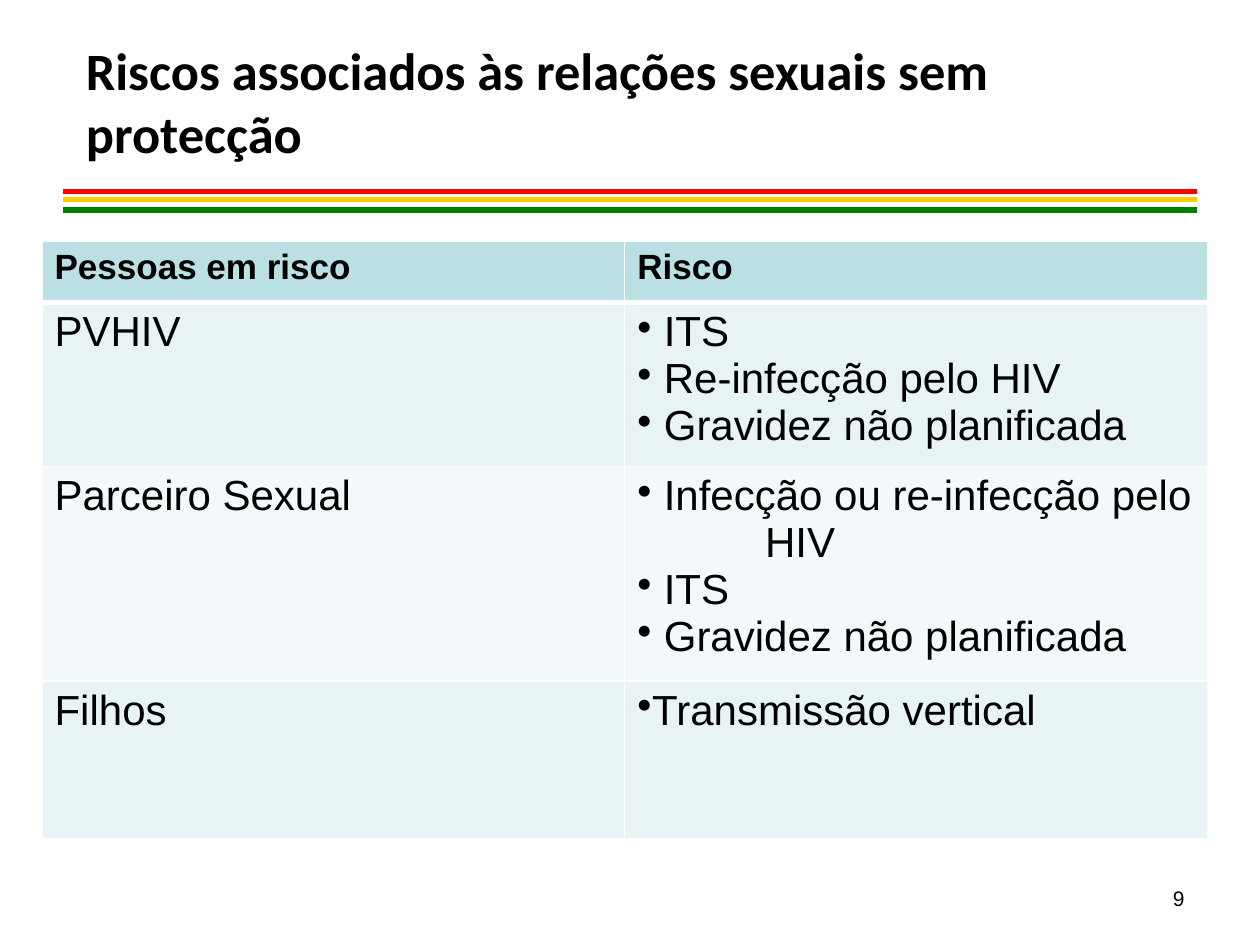
"""Build a slide on the risks of unprotected sexual relations."""
from dataclasses import dataclass

from lxml.etree import SubElement as Sub
from pptx import Presentation as Deck
from pptx.dml.color import RGBColor as Color
from pptx.enum.shapes import MSO_CONNECTOR as Link
from pptx.enum.text import PP_ALIGN as Align
from pptx.oxml.ns import qn
from pptx.util import Pt


@dataclass(frozen=True)
class Theme:
    ink: str = "000000"
    edge: str = "FFFFFF"
    head: str = "BBE0E3"
    bands: tuple = ("E7F3F4", "F3F9FA")
    flag: tuple = (("FFCC00", 114), ("FF0000", 109.5), ("008000", 120))
    face: str = "Arial"
    bold: str = "Calibri"
    title: int = 30
    label: int = 20
    body: int = 24
    page: int = 12


class Slide:
    def __init__(self, deck, theme):
        self.theme = theme
        self.shapes = deck.slides.add_slide(deck.slide_layouts[6]).shapes

    def font(self, para, size, face=None, bold=False):
        font = para.font
        font.size, font.name, font.bold = Pt(size), face or self.theme.face, bold
        font.color.rgb = Color.from_string(self.theme.ink)

    def text(self, words, spot, size, face=None, bold=False, align=Align.LEFT):
        frame = self.shapes.add_textbox(*map(Pt, spot)).text_frame
        frame.word_wrap = True
        para = frame.paragraphs[0]
        para.text, para.alignment = words, align
        self.font(para, size, face, bold)

    def rule(self, color, y):
        line = self.shapes.add_connector(Link.STRAIGHT, Pt(36), Pt(y), Pt(684), Pt(y))
        line.line.color.rgb = Color.from_string(color)
        line.line.width = Pt(3)
        Sub(line._element.spPr, qn("a:effectLst"))

    def bullet(self, para):
        props = para._p.get_or_add_pPr()
        props.set("marL", "0")
        props.set("indent", "0")
        Sub(props, qn("a:buChar"), char="•")
        if "\t" in para.text:
            tabs = Sub(props, qn("a:tabLst"))
            Sub(tabs, qn("a:tab"), pos=str(Pt(73)), algn="l")

    def cell(self, cell, lines, fill, size, head=False, dots=False):
        props = cell._tc.get_or_add_tcPr()
        for side in "LRTB":
            wide = 3 if head and side == "B" else 1
            line = Sub(props, qn(f"a:ln{side}"), w=str(Pt(wide)))
            Sub(Sub(line, qn("a:solidFill")), qn("a:srgbClr"), val=self.theme.edge)
        cell.fill.solid()
        cell.fill.fore_color.rgb = Color.from_string(fill)
        frame = cell.text_frame
        for i, words in enumerate(lines):
            para = frame.add_paragraph() if i else frame.paragraphs[0]
            para.text = words
            if dots:
                self.bullet(para)
            self.font(para, size, bold=head)

    def table(self, rows, highs, spot):
        theme = self.theme
        grid = self.shapes.add_table(len(rows), 2, *map(Pt, spot)).table
        grid.first_row = grid.horz_banding = False
        for r, (row, high) in enumerate(zip(rows, highs)):
            grid.rows[r].height = Pt(high)
            head = r == 0
            fill = theme.head if head else theme.bands[(r - 1) % 2]
            size = theme.label if head else theme.body
            for c, lines in enumerate(row):
                dots = c == 1 and not head
                self.cell(grid.cell(r, c), lines, fill, size, head, dots)


def main():
    theme = Theme()
    deck = Deck()
    deck.slide_width, deck.slide_height = Pt(720), Pt(540)
    slide = Slide(deck, theme)
    slide.text("9", (600, 502.5, 84, 37.5), theme.page, align=Align.RIGHT)
    for color, y in theme.flag:
        slide.rule(color, y)
    rows = [
        (["Pessoas em risco"], ["Risco"]),
        (["PVHIV"], [" ITS", " Re-infecção pelo HIV", " Gravidez não planificada"]),
        (["Parceiro Sexual"], [" Infecção ou re-infecção pelo\v\tHIV", " ITS",
                               " Gravidez não planificada"]),
        (["Filhos"], ["Transmissão vertical"]),
    ]
    slide.table(rows, (35, 87.5, 114.5, 90), (24, 138, 666, 327))
    slide.text("Riscos associados às relações sexuais sem protecção",
               (42, 18, 582, 78), theme.title, theme.bold, bold=True)
    deck.save("out.pptx")


if __name__ == "__main__":
    main()
